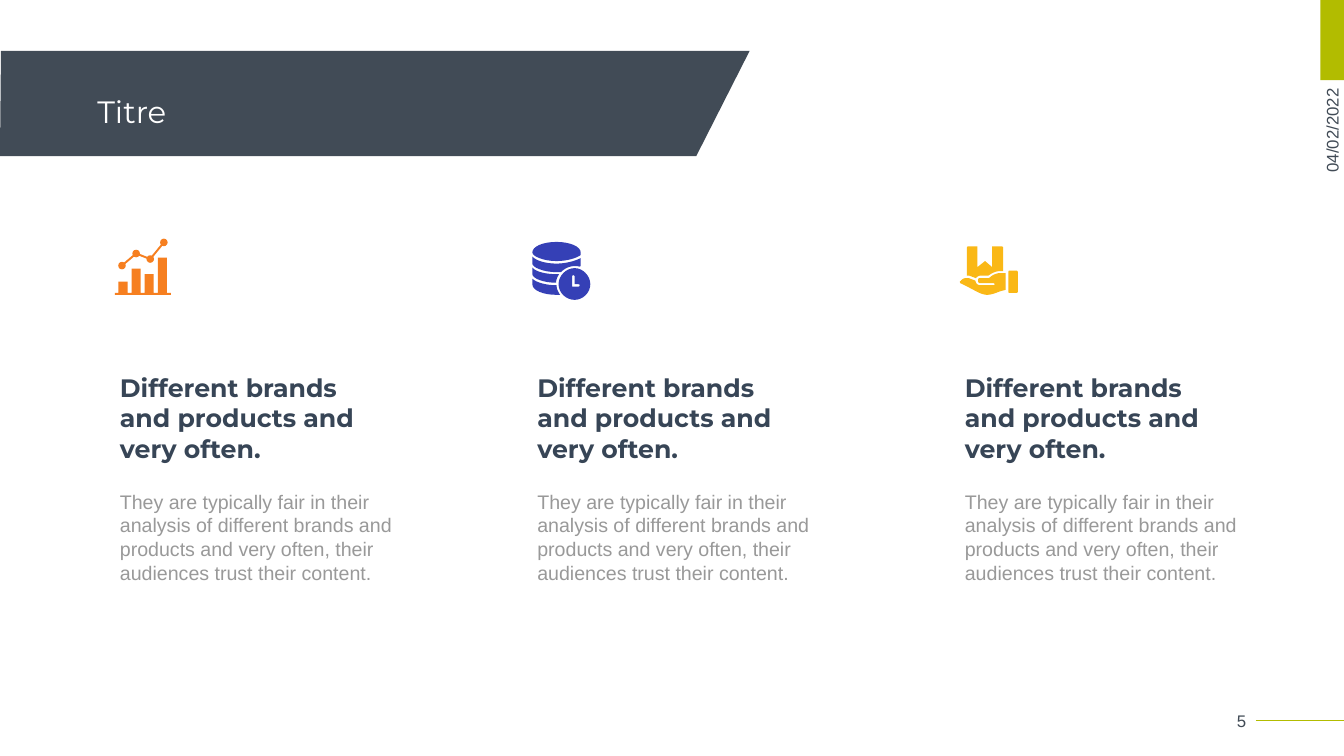
from itertools import pairwise

from lxml import etree
from pptx import Presentation
from pptx import util as u
from pptx.dml.color import RGBColor
from pptx.enum import shapes, text
from pptx.oxml.ns import qn

PX = 9144  # one px is a hundredth of an inch
WIDTH, HEIGHT = 2666, 1500

SLATE = RGBColor(0x41, 0x4B, 0x56)
NAVY = RGBColor(0x37, 0x45, 0x56)
GREY = RGBColor(0x99, 0x99, 0x99)
WHITE = RGBColor(0xFF, 0xFF, 0xFF)
LIME = RGBColor(0xB2, 0xBC, 0x00)
ORANGE = RGBColor(0xF6, 0x7F, 0x20)
INDIGO = RGBColor(0x35, 0x40, 0xB6)
AMBER = RGBColor(0xFA, 0xB8, 0x16)

TITLE, DATE, PAGE = "Titre", "04/02/2022", "5"
HEADING = "Different brands and products and very often."
BODY = ("They are typically fair in their analysis of different brands and products "
        "and very often, their audiences trust their content.")
COLUMN_LEFTS = {"chart": 228, "database": 1056, "delivery": 1904}

BANNER = [(1381, 310), (0, 310), (2, 101), (1487, 101)]

# Icon outlines: x from the column's left, y from the slide's top.
# A pair is a corner; six numbers are a cubic curve (two controls, one end).
BARS = [(7, 25, 559), (33, 51, 533), (59, 77, 544), (85, 103, 511)]
BASELINE = (0, 111, 581, 585)
TREND = [(14, 527), (42, 503), (70, 514), (97, 481)]
DOT = 15

DATABASE = [
    [[(47, 561), (47, 555, 50, 549, 53, 544), (51, 544, 50, 544, 47, 544),
      (28, 544, 8, 540, 0, 531), (0, 544), (0, 552, 21, 561, 47, 561)]],
    [[(48, 540), (57, 540), (63, 533, 73, 528, 84, 528), (87, 528, 91, 528, 93, 529),
      (96, 528), (96, 512), (85, 518, 66, 523, 48, 523), (28, 523, 8, 518, 0, 509),
      (0, 523), (0, 530, 21, 540, 48, 540)]],
    [[(48, 518), (69, 518, 88, 512, 96, 506), (96, 501), (96, 489, 74, 480, 48, 480),
      (21, 480, 0, 489, 0, 501), (0, 508, 21, 518, 48, 518)]],
    [[(48, 566), (29, 566, 8, 561, 0, 553), (0, 564), (0, 576, 21, 585, 48, 585),
      (55, 585), (51, 579, 48, 573, 48, 566)]],
    # clock face, with its hands cut out
    [[(84, 532), (67, 532, 52, 547, 52, 564), (52, 581, 67, 595, 84, 595),
      (100, 595, 115, 581, 115, 564), (115, 547, 100, 532, 84, 532)],
     [(91, 569), (79, 569), (79, 548), (79, 547, 80, 546, 81, 546),
      (82, 546, 84, 547, 84, 548), (84, 564), (91, 564),
      (93, 564, 94, 565, 94, 566), (94, 567, 93, 569, 91, 569)]],
]
DELIVERY = [
    # sleeve, parcel, hand
    [[(112, 537), (98, 537), (97, 537, 96, 539, 96, 540), (96, 579),
      (96, 580, 97, 581, 98, 581), (112, 581), (114, 581, 115, 580, 115, 579),
      (115, 540), (115, 539, 114, 537, 112, 537)]],
    [[(83, 489), (64, 489), (64, 530), (50, 518), (35, 530), (35, 489), (16, 489),
      (15, 489, 14, 490, 14, 492), (14, 547), (19, 547), (32, 552),
      (33, 550, 37, 547, 40, 547), (56, 547), (61, 544, 69, 538, 79, 538),
      (86, 538), (86, 492), (86, 490, 85, 489, 83, 489)]],
    [[(91, 542), (79, 542), (71, 542, 63, 547, 60, 550), (59, 551, 57, 552, 57, 552),
      (38, 552), (37, 553), (36, 554, 36, 556, 36, 557), (36, 559, 37, 562, 41, 562),
      (67, 562), (68, 562, 69, 563, 69, 564), (69, 565, 68, 566, 67, 566), (41, 566),
      (35, 566, 31, 562, 31, 557), (18, 552), (10, 551, 6, 552, 1, 558),
      (0, 558, 0, 559, 0, 560), (1, 562), (10, 566, 19, 571, 25, 574),
      (39, 582, 47, 585, 54, 585), (61, 585, 67, 583, 80, 578), (91, 575)]],
]


def px(*lengths):
    return [round(length * PX) for length in lengths]


def paint(shape, color):
    shape.shadow.inherit = False
    shape.fill.solid()
    shape.fill.fore_color.rgb = color
    shape.line.fill.background()


def flatten(outline, left, steps=8):
    """Turn corners and cubic curves into EMU points."""
    points = [outline[0]]
    for part in outline[1:]:
        if len(part) == 2:
            points.append(part)
            continue
        controls = [points[-1], part[:2], part[2:4], part[4:]]
        for step in range(1, steps + 1):
            t = step / steps
            weights = ((1 - t) ** 3, 3 * t * (1 - t) ** 2, 3 * t * t * (1 - t), t ** 3)
            points.append(tuple(sum(w * c[axis] for w, c in zip(weights, controls))
                                for axis in (0, 1)))
    return [px(left + x, y) for x, y in points]


def add_outline(parent, contours, color, left=0):
    contours = [flatten(contour, left) for contour in contours]
    builder = parent.build_freeform(*contours[0][0], scale=1.0)
    for number, (start, *rest) in enumerate(contours):
        if number:
            builder.move_to(*start)
        builder.add_line_segments(rest, close=True)
    paint(builder.convert_to_shape(), color)


def add_line(parent, start, end, color, points):
    line = parent.add_connector(shapes.MSO_CONNECTOR.STRAIGHT, *px(*start, *end))
    line.line.color.rgb = color
    line.line.width = u.Pt(points)
    etree.SubElement(line._element.spPr, qn("a:effectLst"))


def write(shape, content, size, color, font="Arial", bold=False,
          align=text.PP_ALIGN.LEFT, anchor=text.MSO_ANCHOR.MIDDLE,
          fit=text.MSO_AUTO_SIZE.NONE):
    frame = shape.text_frame
    frame.word_wrap = True
    frame.auto_size = fit
    frame.vertical_anchor = anchor
    paragraph = frame.paragraphs[0]
    paragraph.alignment = align
    run = paragraph.add_run()
    run.text = content
    run.font.size = u.Pt(size)
    run.font.name = font
    run.font.bold = bold
    run.font.color.rgb = color
    return paragraph


def add_chart_icon(parent, left):
    start, end, top, bottom = BASELINE
    comb = [(start, bottom), (start, top)]
    for bar_left, bar_right, bar_top in BARS:
        comb += [(bar_left, top), (bar_left, bar_top), (bar_right, bar_top), (bar_right, top)]
    add_outline(parent, [comb + [(end, top), (end, bottom)]], ORANGE, left)
    trend = [(left + x, y) for x, y in TREND]
    for here, there in pairwise(trend):
        add_line(parent, here, there, ORANGE, 2.75)
    for x, y in trend:
        dot = parent.add_shape(shapes.MSO_SHAPE.OVAL,
                               *px(x - DOT / 2, y - DOT / 2, DOT, DOT))
        paint(dot, ORANGE)


def add_column(slide, icon, left):
    column = slide.shapes.add_group_shape().shapes
    top_grow = {"anchor": text.MSO_ANCHOR.TOP, "fit": text.MSO_AUTO_SIZE.SHAPE_TO_FIT_TEXT}
    write(column.add_textbox(*px(left, 967, 562, 199)), BODY, 28, GREY, **top_grow)
    write(column.add_textbox(*px(left, 734, 528, 192)), HEADING, 36, NAVY,
          "Montserrat", True, **top_grow)
    if icon == "chart":
        add_chart_icon(column, left)
        return
    pieces, color = {"database": (DATABASE, INDIGO), "delivery": (DELIVERY, AMBER)}[icon]
    for contours in pieces:
        add_outline(column, contours, color, left)


def main():
    deck = Presentation()
    deck.slide_width, deck.slide_height = px(WIDTH, HEIGHT)
    slide = deck.slides.add_slide(deck.slide_layouts[5])
    title = slide.shapes.title

    add_outline(slide.shapes, [BANNER], SLATE)
    add_line(slide.shapes, (2491, 1430), (WIDTH, 1430), LIME, 1.5)
    date = slide.shapes.add_textbox(*px(2542, 219, 200, 80))
    date.rotation = 270
    write(date, DATE, 24, SLATE, align=text.PP_ALIGN.CENTER)
    tab = slide.shapes.add_shape(shapes.MSO_SHAPE.RECTANGLE, *px(2619, 0, 47, 159))
    paint(tab, LIME)
    page = slide.shapes.add_textbox(*px(2219, 1390, 263, 80))
    write(page, PAGE, 24, SLATE, align=text.PP_ALIGN.RIGHT)

    title.left, title.top, title.width, title.height = px(183, 80, 2299, 290)
    write(title, TITLE, 44, WHITE, "Montserrat").line_spacing = 0.9
    slide.shapes._spTree.append(title._element)  # in front of the banner

    for icon, left in COLUMN_LEFTS.items():
        add_column(slide, icon, left)
    deck.save("out.pptx")


if __name__ == "__main__":
    main()
